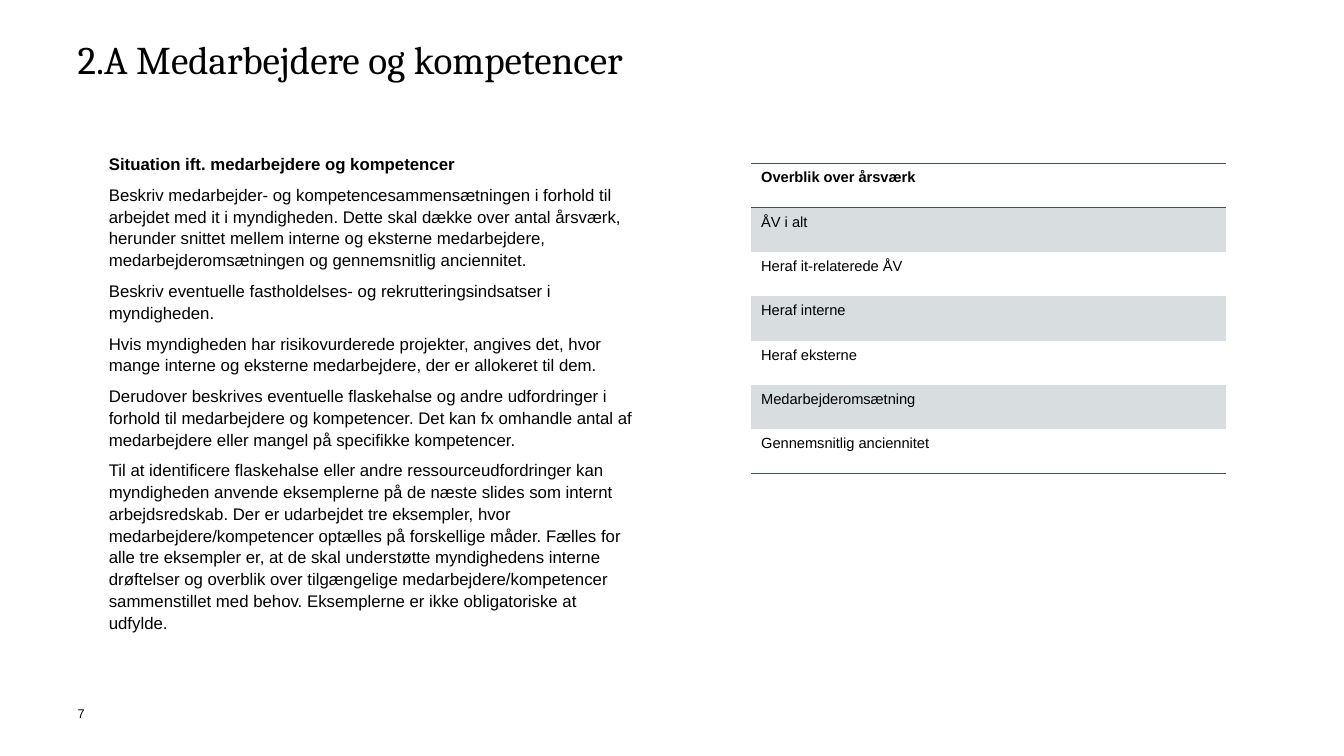
from pptx import Presentation
from pptx.dml.color import RGBColor
from pptx.oxml import parse_xml
from pptx.oxml.ns import nsdecls
from pptx.util import Inches, Pt

BLACK, SLATE, BAND = "000000", "3B5463", "D8DDE0"
NO_STYLE = "{2D5ABB26-0587-4C30-8999-92F81FD0307C}"
BODY = {"name": "Arial", "size": Pt(12)}
CELL = {"name": "Arial", "size": Pt(10.5)}

SITUATION = [
    "Situation ift. medarbejdere og kompetencer",
    "Beskriv medarbejder- og kompetencesammensætningen i forhold til arbejdet "
    "med it i myndigheden. Dette skal dække over antal årsværk, herunder "
    "snittet mellem interne og eksterne medarbejdere, medarbejderomsætningen "
    "og gennemsnitlig anciennitet.",
    "Beskriv eventuelle fastholdelses- og rekrutteringsindsatser i myndigheden.",
    "Hvis myndigheden har risikovurderede projekter, angives det, hvor mange "
    "interne og eksterne medarbejdere, der er allokeret til dem.",
    "Derudover beskrives eventuelle flaskehalse og andre udfordringer i forhold "
    "til medarbejdere og kompetencer. Det kan fx omhandle antal af medarbejdere "
    "eller mangel på specifikke kompetencer.",
    "Til at identificere flaskehalse eller andre ressourceudfordringer kan "
    "myndigheden anvende eksemplerne på de næste slides som internt "
    "arbejdsredskab. Der er udarbejdet tre eksempler, hvor "
    "medarbejdere/kompetencer optælles på forskellige måder. Fælles for alle "
    "tre eksempler er, at de skal understøtte myndighedens interne drøftelser "
    "og overblik over tilgængelige medarbejdere/kompetencer sammenstillet med "
    "behov. Eksemplerne er ikke obligatoriske at udfylde.",
]
OVERVIEW = [
    "Overblik over årsværk", "ÅV i alt", "Heraf it-relaterede ÅV",
    "Heraf interne", "Heraf eksterne", "Medarbejderomsætning",
    "Gennemsnitlig anciennitet",
]


def color(value):
    return RGBColor.from_string(value)


def write(p, text, fmt, bold=False, spacing=1.0):
    p.line_spacing = spacing
    r = p.add_run()
    r.text = text
    for key, value in {**fmt, "bold": bold}.items():
        setattr(r.font, key, value)
    r.font.color.rgb = color(BLACK)


def add_text(s, box, texts, fmt, heading=False, spacing=1.0):
    tf = s.shapes.add_textbox(*map(Inches, box)).text_frame
    tf.word_wrap = True
    for side in ("left", "top", "right", "bottom"):
        setattr(tf, f"margin_{side}", 0)
    for i, text in enumerate(texts):
        p = tf.add_paragraph() if i else tf.paragraphs[0]
        if i:
            p.space_before = Pt(6.5)
        write(p, text, fmt, heading and i == 0, spacing)


def add_border(cell, side):
    cell._tc.get_or_add_tcPr().append(parse_xml(
        f'<a:{side} {nsdecls("a")} w="12700"><a:solidFill>'
        f'<a:srgbClr val="{SLATE}"/></a:solidFill></a:{side}>'))


def add_overview(s, left, top, widths, row_height, labels):
    frame = s.shapes.add_table(
        len(labels), len(widths), Inches(left), Inches(top),
        Inches(sum(widths)), Inches(row_height * len(labels)))
    table = frame.table
    table._tbl.tblPr.find("{*}tableStyleId").text = NO_STYLE
    table.first_row = table.horz_banding = False
    for column, width in zip(table.columns, widths):
        column.width = Inches(width)
    last = len(labels) - 1
    for i, label in enumerate(labels):
        table.rows[i].height = Inches(row_height)
        write(table.cell(i, 0).text_frame.paragraphs[0], label, CELL, i == 0, 1.08)
        for j in range(len(widths)):
            cell = table.cell(i, j)
            if i == 0:
                add_border(cell, "lnT")
            if i in (0, last):
                add_border(cell, "lnB")
            if i % 2:
                cell.fill.solid()
                cell.fill.fore_color.rgb = color(BAND)
            else:
                cell.fill.background()


def main():
    prs = Presentation()
    prs.slide_width, prs.slide_height = Inches(13.33), Inches(7.5)
    s = prs.slides.add_slide(prs.slide_layouts[6])
    add_text(s, (0.77, 0.4, 11.8, 1.02), ["2.A Medarbejdere og kompetencer"],
             {"name": "Cambria", "size": Pt(28)}, spacing=0.9)
    add_text(s, (1.08, 1.51, 5.2, 4.91), SITUATION, BODY, True, 1.08)
    add_overview(s, 7.45, 1.62, (2.28, 2.43), 0.44, OVERVIEW)
    add_text(s, (0.77, 7, 0.31, 0.3), ["7"], {"name": "Arial", "size": Pt(9)})
    prs.save("out.pptx")


if __name__ == "__main__":
    main()
